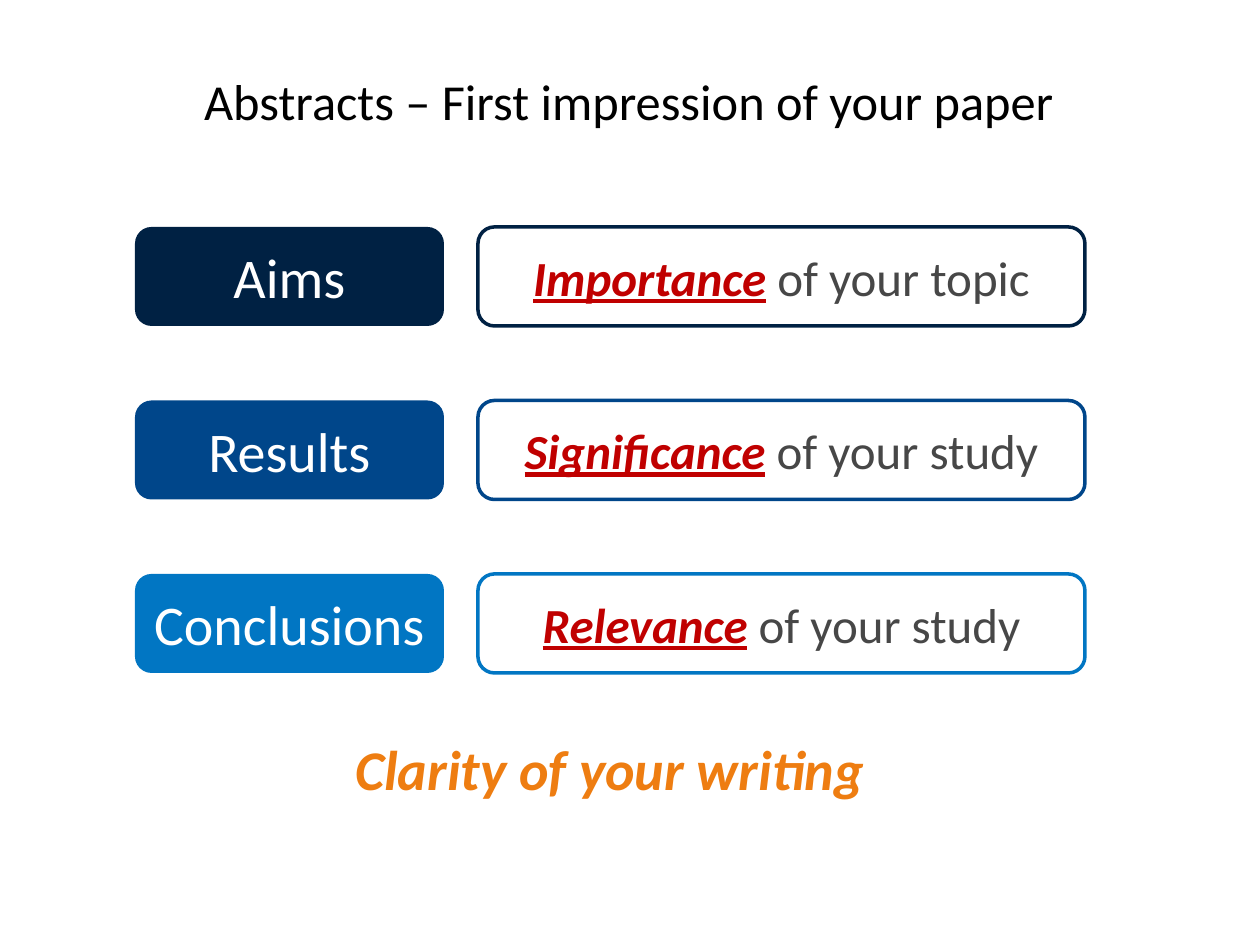
"""Builds a slide on the parts of an abstract and what each one conveys."""
from pptx import Presentation
from pptx.dml.color import RGBColor
from pptx.enum.shapes import MSO_SHAPE as Shape
from pptx.enum.text import MSO_ANCHOR as Anchor, PP_ALIGN as Align
from pptx.util import Emu, Pt

TITLE = "Abstracts – First impression of your paper"
ROWS = [
    ("Aims", "Importance", "of your topic", "002143"),
    ("Results", "Significance", "of your study", "00468A"),
    ("Conclusions", "Relevance", "of your study", "0176C3"),
]
CLOSING = "Clarity of your writing"

FONT = "Calibri"
WHITE, BLACK, GREY, RED, ORANGE = "FFFFFF", "000000", "474747", "C00000", "EE7D11"
LABEL_LEFT, LABEL_WIDTH = 135, 309
DETAIL_LEFT, DETAIL_WIDTH = 478, 607
ROW_TOP, ROW_STEP, ROW_HEIGHT = 227, 173.5, 99


def px(length):
    return Emu(round(length * 914400 / 126))


def color(value):
    return RGBColor.from_string(value)


def add_span(para, text, size, tint, strong=False, underline=False):
    span = para.add_run()
    span.text = text
    font = span.font
    font.name, font.size = FONT, Pt(size)
    font.bold = font.italic = strong
    font.underline = underline
    font.color.rgb = color(tint)


def center_para(frame, anchor=Anchor.MIDDLE, margin=0):
    frame.word_wrap = True
    frame.vertical_anchor = anchor
    frame.margin_left = frame.margin_right = px(margin)
    frame.margin_top = frame.margin_bottom = px(margin)
    para = frame.paragraphs[0]
    para.alignment = Align.CENTER
    return para


def add_box(page, left, top, width, fill, line):
    box = page.shapes.add_shape(
        Shape.ROUNDED_RECTANGLE, px(left), px(top), px(width), px(ROW_HEIGHT))
    box.shadow.inherit = False
    box.fill.solid()
    box.fill.fore_color.rgb = color(fill)
    if line:
        box.line.color.rgb = color(line)
        box.line.width = Pt(2)
    else:
        box.line.fill.background()
    return center_para(box.text_frame)


def main():
    deck = Presentation()
    deck.slide_width, deck.slide_height = px(1260), px(945)
    page = deck.slides.add_slide(deck.slide_layouts[5])

    title = page.shapes.title
    title.left, title.top, title.width, title.height = map(px, (105, 74, 1048, 52))
    add_span(center_para(title.text_frame), TITLE, 28.8, BLACK)

    for index, (label, keyword, rest, tint) in enumerate(ROWS):
        top = ROW_TOP + index * ROW_STEP
        para = add_box(page, LABEL_LEFT, top, LABEL_WIDTH, tint, None)
        add_span(para, label, 32, WHITE)
        para = add_box(page, DETAIL_LEFT, top, DETAIL_WIDTH, WHITE, tint)
        add_span(para, keyword, 28, RED, strong=True, underline=True)
        add_span(para, " " + rest, 28, GREY)

    width = DETAIL_LEFT + DETAIL_WIDTH - LABEL_LEFT
    closing = page.shapes.add_textbox(px(LABEL_LEFT), px(763), px(width), px(62))
    para = center_para(closing.text_frame, Anchor.TOP)
    para.line_spacing, para.space_before = Pt(22), Pt(9)
    add_span(para, CLOSING, 32, ORANGE, strong=True)

    deck.save("out.pptx")


if __name__ == "__main__":
    main()
